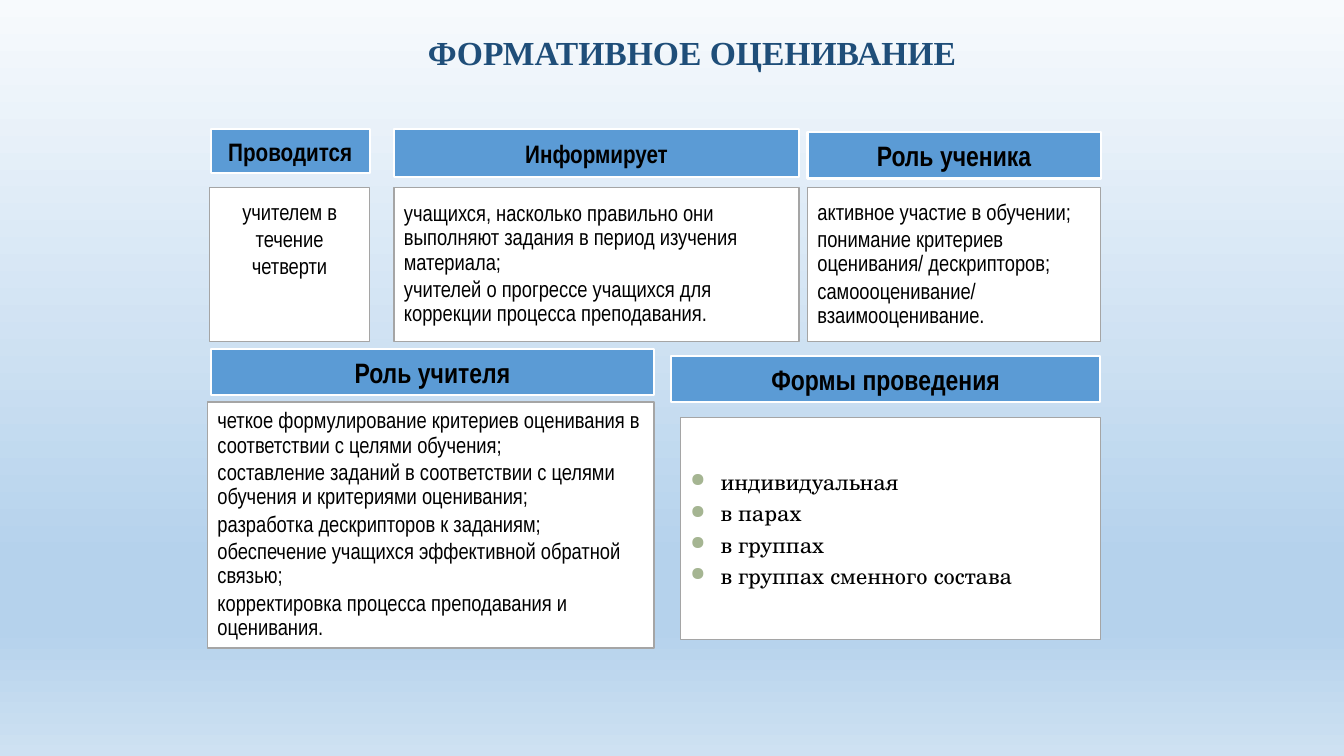
from lxml.etree import SubElement
from pptx import Presentation
from pptx.dml.color import RGBColor
from pptx.enum.shapes import MSO_SHAPE
from pptx.enum.text import MSO_ANCHOR, PP_ALIGN
from pptx.oxml.ns import qn
from pptx.util import Cm, Pt

COLORS = {
    "title": "1F4E79",
    "header": "5B9BD5",
    "card": "FFFFFF",
    "header_border": "FFFFFF",
    "card_border": "A5A5A5",
    "text": "000000",
    "bullet": "A5B592",
}
BACKGROUND_STOPS = [(0, "F7FAFD"), (74, "B5D2EC"), (83, "B5D2EC"), (100, "CEE1F2")]
NARROW = "Arial Narrow"

HEADERS = [
    ("Проводится", 18, (5.31, 3.25, 4.01, 1.12)),
    ("Информирует", 18, (9.93, 3.25, 10.21, 1.22)),
    ("Роль ученика", 20, (20.35, 3.33, 7.39, 1.17)),
    ("Роль учителя", 20, (5.31, 8.79, 11.18, 1.17)),
    ("Формы проведения", 20, (16.92, 8.97, 10.8, 1.17)),
]
CARDS = [
    ((9.93, 4.72, 10.21, 3.89), [
        "учащихся, насколько правильно они выполняют задания в период изучения материала;",
        "учителей о прогрессе учащихся для коррекции процесса преподавания.",
    ]),
    ((20.35, 4.72, 7.39, 3.89), [
        "активное участие в обучении;",
        "понимание критериев оценивания/ дескрипторов;",
        "самоооценивание/ взаимооценивание.",
    ]),
    ((5.23, 10.13, 11.25, 6.2), [
        "четкое формулирование критериев оценивания в соответствии с целями обучения;",
        "составление заданий в соответствии с целями обучения и критериями оценивания;",
        "разработка дескрипторов к заданиям;",
        "обеспечение учащихся эффективной обратной связью;",
        "корректировка процесса преподавания и оценивания.",
    ]),
]
FORMS = ["индивидуальная", "в парах", "в группах", "в группах сменного состава"]


def color(name):
    return RGBColor.from_string(COLORS[name])


def paint_background(slide):
    fill = slide.background.fill
    fill.gradient()
    fill.gradient_angle = 270
    stops = next(slide.element.iter(qn("a:gsLst")))
    for stop in list(stops):
        stops.remove(stop)
    for percent, shade in BACKGROUND_STOPS:
        stop = SubElement(stops, qn("a:gs"), pos=str(percent * 1000))
        SubElement(stop, qn("a:srgbClr"), val=shade)


def style_font(paragraph, size, name=NARROW, shade="text", bold=False):
    font = paragraph.font
    font.size = Pt(size)
    font.name = name
    font.bold = bold
    font.color.rgb = color(shade)


def add_bullet(paragraph):
    properties = paragraph._p.get_or_add_pPr()
    properties.set("marL", str(Cm(0.76)))
    properties.set("indent", str(-Cm(0.76)))
    bullet_color = SubElement(properties, qn("a:buClr"))
    SubElement(bullet_color, qn("a:srgbClr"), val=COLORS["bullet"])
    SubElement(properties, qn("a:buSzPct"), val="85000")
    SubElement(properties, qn("a:buChar"), char="●")


def write_lines(frame, lines, align=PP_ALIGN.LEFT):
    frame.word_wrap = True
    frame.vertical_anchor = MSO_ANCHOR.MIDDLE
    frame.text = "\n".join(lines)
    for paragraph in frame.paragraphs:
        paragraph.alignment = align
    return frame.paragraphs


def add_box(slide, place, fill, border, width):
    box = slide.shapes.add_shape(MSO_SHAPE.RECTANGLE, *map(Cm, place))
    box.shadow.inherit = False
    box.fill.solid()
    box.fill.fore_color.rgb = color(fill)
    box.line.color.rgb = color(border)
    box.line.width = Pt(width)
    return box.text_frame


def add_title(slide, text):
    frame = slide.shapes.add_textbox(Cm(7.32), Cm(0.33), Cm(20.24), Cm(2.11)).text_frame
    for paragraph in write_lines(frame, [text], PP_ALIGN.CENTER):
        paragraph.line_spacing = 0.9
        style_font(paragraph, 24, "Times New Roman", "title", True)


def add_header(slide, text, size, place):
    frame = add_box(slide, place, "header", "header_border", 1.5)
    for paragraph in write_lines(frame, [text], PP_ALIGN.CENTER):
        style_font(paragraph, size, bold=True)


def add_card(slide, place):
    return add_box(slide, place, "card", "card_border", 1)


def add_period_card(slide):
    frame = add_card(slide, (5.28, 4.72, 4.04, 3.89))
    for paragraph in write_lines(frame, ["учителем в течение четверти"], PP_ALIGN.CENTER):
        style_font(paragraph, 16)
    frame.vertical_anchor = MSO_ANCHOR.TOP
    frame.margin_top = Cm(0.28)


def add_text_card(slide, place, lines):
    for paragraph in write_lines(add_card(slide, place), lines):
        paragraph.line_spacing = 0.9
        paragraph.space_after = Pt(2.4)
        style_font(paragraph, 16)


def add_forms_card(slide):
    frame = add_card(slide, (17.15, 10.52, 10.59, 5.59))
    for paragraph in write_lines(frame, FORMS):
        paragraph.space_before = Pt(3.2)
        add_bullet(paragraph)
        style_font(paragraph, 16, "TeX Gyre Schola")


def main():
    presentation = Presentation()
    presentation.slide_width = Cm(33.87)
    presentation.slide_height = Cm(19.05)
    slide = presentation.slides.add_slide(presentation.slide_layouts[6])
    paint_background(slide)
    add_title(slide, "ФОРМАТИВНОЕ ОЦЕНИВАНИЕ")
    for text, size, place in HEADERS:
        add_header(slide, text, size, place)
    add_period_card(slide)
    for place, lines in CARDS:
        add_text_card(slide, place, lines)
    add_forms_card(slide)
    presentation.save("out.pptx")


if __name__ == "__main__":
    main()
